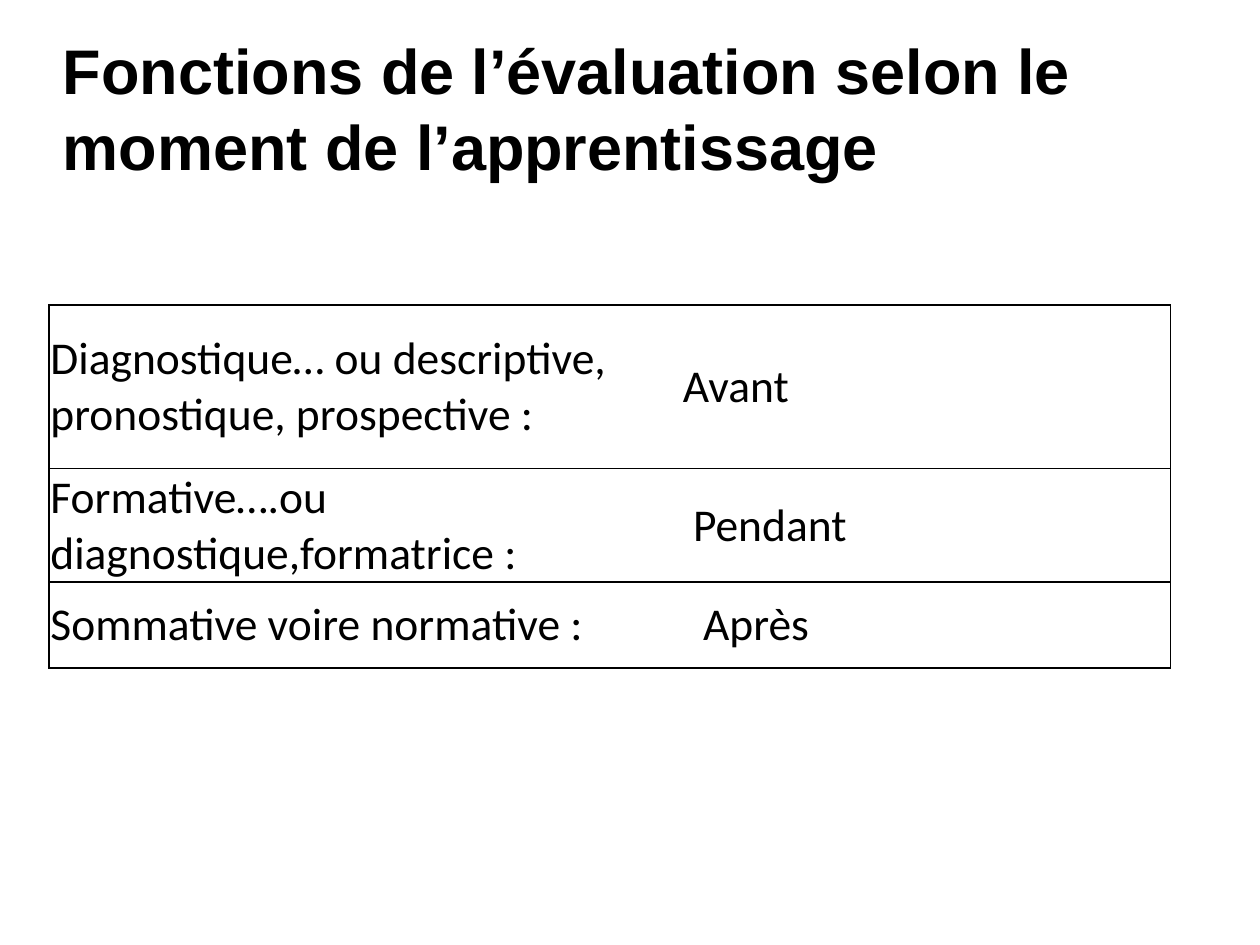
from dataclasses import dataclass

from lxml import etree
from pptx import Presentation
from pptx.dml.color import RGBColor
from pptx.enum.text import MSO_ANCHOR
from pptx.oxml.ns import qn
from pptx.util import Inches, Pt

BOTTOM = MSO_ANCHOR.BOTTOM
MIDDLE = MSO_ANCHOR.MIDDLE


@dataclass(frozen=True)
class Theme:
    ink: str = "000000"
    paper: str = "FFFFFF"
    title_font: str = "Arial"
    title_size: int = 36
    table_font: str = "Calibri"
    table_size: int = 26
    border_width: int = 1


THEME = Theme()

TITLE = "Fonctions de l’évaluation selon le moment de l’apprentissage"

# Function, moment, row height, indent of the moment
ROWS = [
    ("Diagnostique… ou descriptive, pronostique, prospective\u00a0:", "Avant", 1.3, 0.57),
    ("Formative….ou diagnostique,formatrice\u00a0:", "Pendant", 0.9, 0.65),
    ("Sommative voire normative\u00a0:", "Après", 0.68, 0.73),
]
TABLE_LEFT, TABLE_TOP = 0.39, 2.42
COLUMN_WIDTH = 4.45
CELL_MARGIN = 0.01


def style_paragraph(paragraph, name, size, bold=False):
    font = paragraph.font
    font.name = name
    font.size = Pt(size)
    font.bold = bold
    font.color.rgb = RGBColor.from_string(THEME.ink)


def add_title(slide):
    shape = slide.shapes.add_textbox(Inches(0.5), Inches(0.77), Inches(9.5), Inches(1.25))
    frame = shape.text_frame
    frame.word_wrap = True
    frame.vertical_anchor = BOTTOM
    frame.margin_left = frame.margin_top = 0
    frame.margin_right = Inches(0.02)
    frame.margin_bottom = Inches(0.57)
    frame.text = TITLE
    style_paragraph(frame.paragraphs[0], THEME.title_font, THEME.title_size, bold=True)


def set_borders(cell, drawn_sides):
    properties = cell._tc.get_or_add_tcPr()
    for side in "LRTB":
        line = etree.SubElement(properties, qn(f"a:ln{side}"), w=str(Pt(THEME.border_width)))
        if side in drawn_sides:
            fill = etree.SubElement(line, qn("a:solidFill"))
            etree.SubElement(fill, qn("a:srgbClr"), val=THEME.ink)
        else:
            etree.SubElement(line, qn("a:noFill"))


def fill_cell(cell, text, drawn_sides, indent=0):
    set_borders(cell, drawn_sides)
    cell.fill.solid()
    cell.fill.fore_color.rgb = RGBColor.from_string(THEME.paper)
    cell.vertical_anchor = MIDDLE
    cell.margin_left = Inches(CELL_MARGIN + indent)
    cell.margin_right = cell.margin_top = cell.margin_bottom = Inches(CELL_MARGIN)
    cell.text = text
    style_paragraph(cell.text_frame.paragraphs[0], THEME.table_font, THEME.table_size)


def add_moments_table(slide):
    height = sum(row[2] for row in ROWS)
    table = slide.shapes.add_table(
        len(ROWS), 2, Inches(TABLE_LEFT), Inches(TABLE_TOP),
        Inches(2 * COLUMN_WIDTH), Inches(height)).table
    table.first_row = table.horz_banding = False
    for column in table.columns:
        column.width = Inches(COLUMN_WIDTH)
    for index, (function, moment, row_height, indent) in enumerate(ROWS):
        table.rows[index].height = Inches(row_height)
        # Outer frame and row rules, no line between the columns
        fill_cell(table.cell(index, 0), function, "LTB")
        fill_cell(table.cell(index, 1), moment, "RTB", indent)


def main():
    presentation = Presentation()
    presentation.slide_width = Inches(10)
    presentation.slide_height = Inches(7.5)
    slide = presentation.slides.add_slide(presentation.slide_layouts[6])
    add_title(slide)
    add_moments_table(slide)
    presentation.save("out.pptx")


if __name__ == "__main__":
    main()
